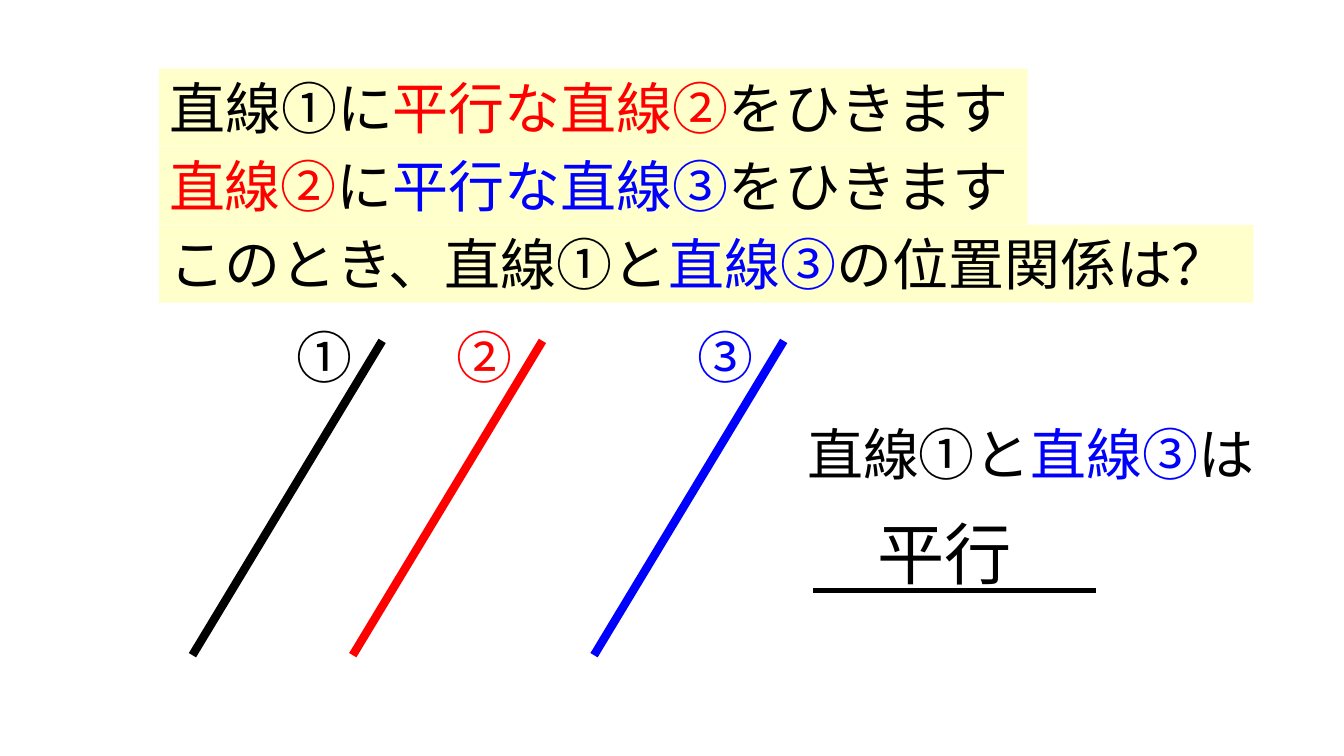
from lxml import etree
from pptx import Presentation
from pptx.dml.color import RGBColor
from pptx.enum.shapes import MSO_CONNECTOR
from pptx.enum.text import MSO_ANCHOR, MSO_AUTO_SIZE, PP_ALIGN
from pptx.oxml.ns import qn
from pptx.util import Cm, Pt

STRAIGHT = MSO_CONNECTOR.STRAIGHT
TOP, LEFT = MSO_ANCHOR.TOP, PP_ALIGN.LEFT
FIXED = MSO_AUTO_SIZE.NONE

FONT = "Noto Sans CJK JP"
COLORS = {"black": "000000", "red": "FF0000", "blue": "0000FF", "band": "FFFFCC"}

STATEMENTS = [
    (21.89, [("直線①に", "black"), ("平行な直線②", "red"), ("をひきます", "black")]),
    (21.89, [("直線②", "red"), ("に", "black"), ("平行な直線③", "blue"), ("をひきます", "black")]),
    (27.58, [("このとき、直線①と", "black"), ("直線③", "blue"), ("の位置関係は？", "black")]),
]
PARALLELS = [("①", "black", 9.63), ("②", "red", 13.67), ("③", "blue", 19.75)]
CONCLUSION = [("直線①と", "black"), ("直線③", "blue"), ("は", "black")]
ANSWER = [("平行", "black")]

BAND_LEFT, BAND_TOP, BAND_HEIGHT, BAND_PITCH = 4.01, 1.73, 1.96, 1.97
LINE_TOP, LINE_BOTTOM, LINE_SHIFT = 8.59, 16.51, 4.78
LABEL_TOP, LABEL_SIZE, LABEL_OFFSET = 8, 1.94, 2.41
FRAME_FORMAT = {"word_wrap": False, "auto_size": FIXED, "vertical_anchor": TOP}


def color(name):
    return RGBColor.from_string(COLORS[name])


def write(box, spans, size=40):
    frame = box.text_frame
    for name, value in FRAME_FORMAT.items():
        setattr(frame, name, value)
    para = frame.paragraphs[0]
    para.alignment = LEFT
    for text, color_name in spans:
        span = para.add_run()
        span.text = text
        for name, value in {"size": Pt(size), "name": FONT}.items():
            setattr(span.font, name, value)
        span.font.color.rgb = color(color_name)
        etree.SubElement(span.font._element, qn("a:ea"), typeface=FONT)


def add_text(page, place, spans, size=40):
    box = page.shapes.add_textbox(*map(Cm, place))
    write(box, spans, size)
    return box


def add_line(page, ends, color_name, width):
    line = page.shapes.add_connector(STRAIGHT, *map(Cm, ends))
    line.line.color.rgb = color(color_name)
    line.line.width = Pt(width)
    etree.SubElement(line._element.spPr, qn("a:effectLst"))


def add_statements(page):
    for row, (width, spans) in enumerate(STATEMENTS):
        place = (BAND_LEFT, BAND_TOP + row * BAND_PITCH, width, BAND_HEIGHT)
        if row == 0:
            box = page.shapes.title
            for name, value in zip(("left", "top", "width", "height"), place):
                setattr(box, name, Cm(value))
            write(box, spans)
        else:
            box = add_text(page, place, spans)
        box.fill.solid()
        box.fill.fore_color.rgb = color("band")


def add_parallels(page):
    for label, color_name, x in PARALLELS:
        add_line(page, (x, LINE_TOP, x - LINE_SHIFT, LINE_BOTTOM), color_name, 6)
        place = (x - LABEL_OFFSET, LABEL_TOP, LABEL_SIZE, LABEL_SIZE)
        add_text(page, place, [(label, color_name)])


def main():
    deck = Presentation()
    deck.slide_width, deck.slide_height = Cm(33.87), Cm(19.05)
    page = deck.slides.add_slide(deck.slide_layouts[5])
    add_statements(page)
    add_parallels(page)
    add_text(page, (20.09, 10.44, 12.19, 1.96), CONCLUSION)
    add_text(page, (21.87, 12.78, 3.94, 2.31), ANSWER, 48)
    add_line(page, (20.5, 14.88, 27.61, 14.88), "black", 3)
    deck.save("out.pptx")


if __name__ == "__main__":
    main()
